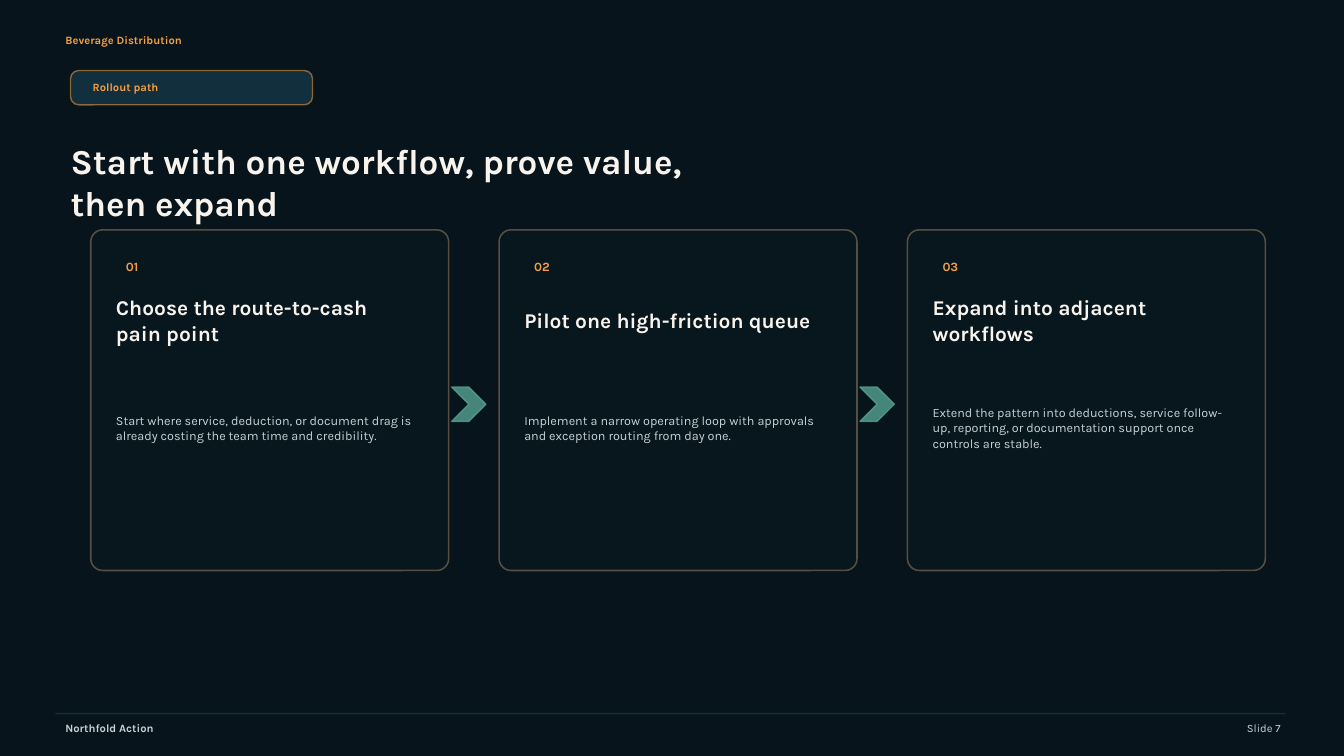
from dataclasses import dataclass

import lxml.etree
import pptx
import pptx.dml.color
import pptx.enum.shapes
import pptx.enum.text
import pptx.oxml.ns
import pptx.util

Inches = pptx.util.Inches
Shapes = pptx.enum.shapes.MSO_SHAPE
Align = pptx.enum.text.PP_ALIGN

FONT = "Karla"
COLORS = {
    "night": "07141B",
    "panel": "102632",
    "steel": "153545",
    "orange": "F59F45",
    "sand": "F8C689",
    "cream": "F8F3EC",
    "mist": "C8D2D6",
    "teal": "56A392",
}


@dataclass(frozen=True)
class Area:
    left: float
    top: float
    width: float
    height: float

    def lengths(self) -> tuple:
        return tuple(Inches(n) for n in (self.left, self.top, self.width, self.height))


@dataclass(frozen=True)
class Label:
    text: str
    area: Area
    size: float
    color: str
    bold: bool = True
    inset: bool = True
    align: Align = Align.LEFT


@dataclass(frozen=True)
class Paint:
    fill: str
    fill_alpha: int
    line: str
    line_alpha: int
    line_width: float = 1


@dataclass(frozen=True)
class Step:
    title: str
    detail: str


BACKDROP = Paint("night", 100, "night", 100)
TAG = Paint("steel", 82, "orange", 55)
CARD = Paint("panel", 12, "sand", 32, 1.1)
ARROW = Paint("teal", 80, "teal", 80)

LABELS = [
    Label("Beverage Distribution", Area(0.55, 0.3, 3.2, 0.2), 8, "orange"),
    Label("Rollout path", Area(0.82, 0.78, 2.16, 0.16), 8, "orange"),
    Label("Start with one workflow, prove value, then expand",
          Area(0.7, 1.05, 6.1, 1.5), 25, "cream", inset=False),
    Label("Northfold Action", Area(0.55, 7.12, 2.2, 0.2), 8, "mist"),
    Label("Slide 7", Area(10.5, 7.12, 2.3, 0.2), 8, "mist", bold=False, align=Align.RIGHT),
]

STEPS = [
    Step("Choose the route-to-cash pain point",
         "Start where service, deduction, or document drag is already costing "
         "the team time and credibility."),
    Step("Pilot one high-friction queue",
         "Implement a narrow operating loop with approvals and exception "
         "routing from day one."),
    Step("Expand into adjacent workflows",
         "Extend the pattern into deductions, service follow-up, reporting, or "
         "documentation support once controls are stable."),
]
FIRST_CARD_LEFT = 0.9
CARD_PITCH = 4.05
CARD_WIDTH = 3.55


def rgb(name: str) -> pptx.dml.color.RGBColor:
    return pptx.dml.color.RGBColor.from_string(COLORS[name])


def paint_solid(fill, color: str, alpha: int) -> None:
    fill.solid()
    fill.fore_color.rgb = rgb(color)
    if alpha < 100:
        node = fill._xPr.find(".//" + pptx.oxml.ns.qn("a:srgbClr"))
        opacity = lxml.etree.SubElement(node, pptx.oxml.ns.qn("a:alpha"))
        opacity.set("val", str(alpha * 1000))


def add_panel(page, kind: Shapes, area: Area, paint: Paint, corner: float | None = None) -> None:
    panel = page.shapes.add_shape(kind, *area.lengths())
    panel.shadow.inherit = False
    if corner is not None:
        panel.adjustments[0] = corner
    paint_solid(panel.fill, paint.fill, paint.fill_alpha)
    paint_solid(panel.line.fill, paint.line, paint.line_alpha)
    panel.line.width = pptx.util.Pt(paint.line_width)


def add_label(page, label: Label) -> None:
    box = page.shapes.add_textbox(*label.area.lengths())
    frame = box.text_frame
    frame.word_wrap = True
    frame.vertical_anchor = pptx.enum.text.MSO_ANCHOR.MIDDLE
    if not label.inset:
        frame.margin_left = frame.margin_right = 0
        frame.margin_top = frame.margin_bottom = 0
    para = frame.paragraphs[0]
    para.text = label.text
    para.alignment = label.align
    para.font.name = FONT
    para.font.size = pptx.util.Pt(label.size)
    para.font.bold = label.bold
    para.font.color.rgb = rgb(label.color)


def add_step(page, index: int, step: Step) -> None:
    left = FIRST_CARD_LEFT + index * CARD_PITCH
    text_left = left + 0.25
    add_panel(page, Shapes.ROUNDED_RECTANGLE, Area(left, 2.28, CARD_WIDTH, 3.38), CARD, 0.035)
    add_label(page, Label(f"{index + 1:02}", Area(text_left, 2.55, 0.5, 0.18), 9, "orange"))
    add_label(page, Label(step.title, Area(text_left, 2.9, 2.9, 0.55), 15, "cream", inset=False))
    add_label(page, Label(step.detail, Area(text_left, 3.62, 3, 1.25), 9, "mist",
                          bold=False, inset=False))
    if index < len(STEPS) - 1:
        add_panel(page, Shapes.CHEVRON, Area(left + CARD_WIDTH + 0.03, 3.84, 0.34, 0.34), ARROW)


def add_footer_rule(page) -> None:
    rule = page.shapes.add_connector(
        pptx.enum.shapes.MSO_CONNECTOR.STRAIGHT,
        Inches(0.55), Inches(7.08), Inches(12.75), Inches(7.08))
    paint_solid(rule.line.fill, "steel", 80)
    rule.line.width = pptx.util.Pt(1)
    lxml.etree.SubElement(rule._element.spPr, pptx.oxml.ns.qn("a:effectLst"))


def main() -> None:
    deck = pptx.Presentation()
    deck.slide_width = Inches(13.33)
    deck.slide_height = Inches(7.5)
    page = deck.slides.add_slide(deck.slide_layouts[6])
    paint_solid(page.background.fill, "night", 100)
    add_panel(page, Shapes.RECTANGLE, Area(0, 0, 13.33, 7.5), BACKDROP)
    add_panel(page, Shapes.ROUNDED_RECTANGLE, Area(0.7, 0.7, 2.4, 0.34), TAG, 0.235)
    for label in LABELS:
        add_label(page, label)
    for index, step in enumerate(STEPS):
        add_step(page, index, step)
    add_footer_rule(page)
    deck.save("out.pptx")


if __name__ == "__main__":
    main()
